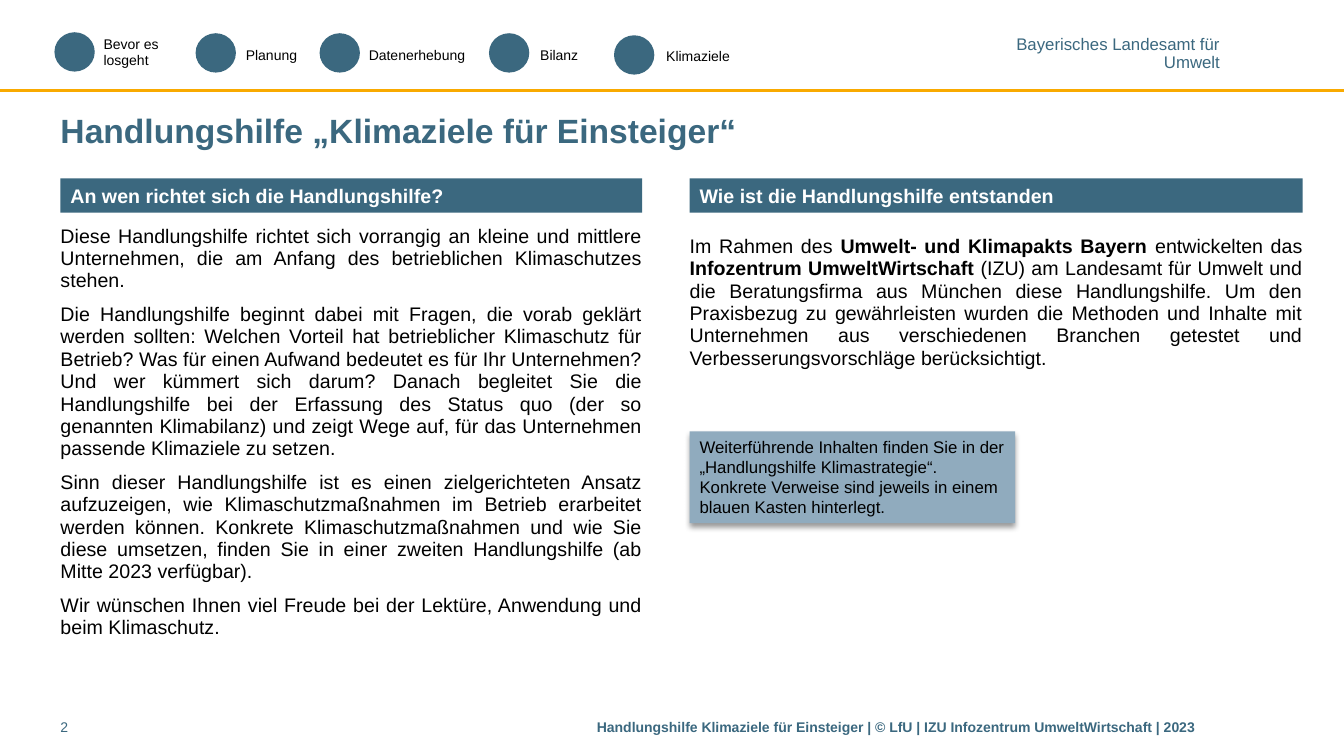
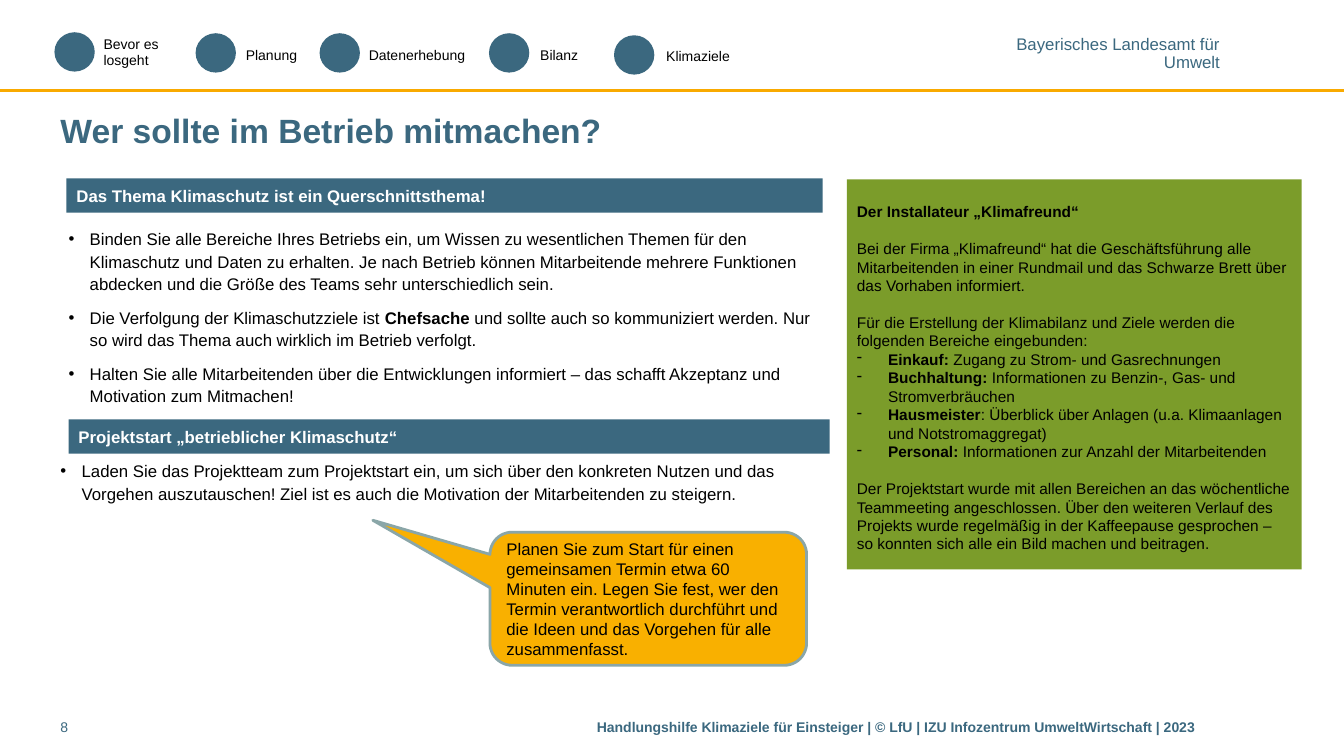
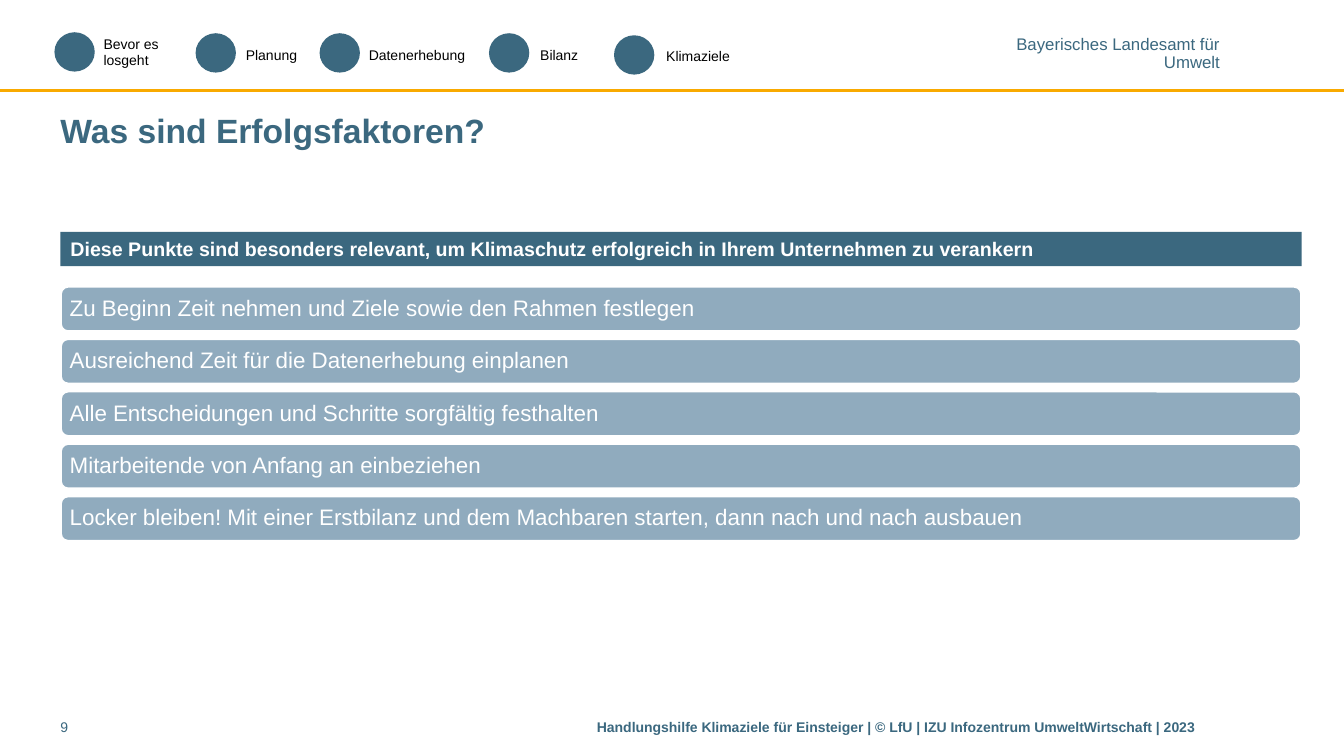
"""Builds three slides of a guide on climate targets for beginners."""
from lxml import etree
from pptx import Presentation
from pptx.dml.color import RGBColor
from pptx.enum.shapes import MSO_CONNECTOR, MSO_SHAPE
from pptx.enum.text import MSO_ANCHOR, MSO_AUTO_SIZE, PP_ALIGN
from pptx.oxml import parse_xml
from pptx.oxml.ns import nsdecls, qn
from pptx.util import Inches, Pt

BLUE = RGBColor(0x3B, 0x68, 0x7F)
LIGHT_BLUE = RGBColor(0x90, 0xAB, 0xBE)
AMBER = RGBColor(0xF9, 0xAA, 0x00)
CALLOUT = RGBColor(0xF9, 0xB0, 0x00)
GREY_BLUE = RGBColor(0x8A, 0xA6, 0xA8)
GREEN = RGBColor(0x7B, 0x9C, 0x2A)
BLACK = RGBColor(0, 0, 0)
WHITE = RGBColor(255, 255, 255)
FONT = "Arial"
BULLET_INDENT = {"• ": 0.21, "- ": 0.31}
LEFT, WIDTH = 0.6, 12.31
BAR_H = 0.34
TWO_CONTENT, TITLE_ONLY = 3, 5


def write(sp, paras, size, color=BLACK, bold=False, align=PP_ALIGN.LEFT,
          line=1.0, before=0, anchor=MSO_ANCHOR.TOP, side=0.1, wrap=True):
    """Fill a shape with paragraphs; ** marks bold and a leading sign a bullet."""
    tf = sp.text_frame
    tf.word_wrap = wrap
    tf.auto_size = MSO_AUTO_SIZE.NONE
    tf.vertical_anchor = anchor
    tf.margin_left = tf.margin_right = Inches(side)
    tf.margin_top = tf.margin_bottom = Inches(0.05)
    for i, text in enumerate(paras):
        p = tf.add_paragraph() if i else tf.paragraphs[0]
        p.alignment = align
        p.line_spacing = line
        p.space_before = Pt(before if i else 0)
        p.space_after = Pt(0)
        indent = BULLET_INDENT.get(text[:2], 0)
        pPr = p._p.get_or_add_pPr()
        pPr.set("marL", str(Inches(indent)))
        pPr.set("indent", str(Inches(-indent)))
        if indent:
            etree.SubElement(pPr, qn("a:buChar")).set("char", text[0])
            text = text[2:]
        else:
            etree.SubElement(pPr, qn("a:buNone"))
        for j, part in enumerate(text.split("**")):
            if part:
                r = p.add_run()
                r.text = part
                r.font.name = FONT
                r.font.size = Pt(size)
                r.font.color.rgb = color
                r.font.bold = bold or j % 2 == 1


def add_box(s, kind, x, y, w, h, fill, line=None):
    """Add a filled preset shape without a shadow."""
    sp = s.shapes.add_shape(kind, Inches(x), Inches(y), Inches(w), Inches(h))
    sp.shadow.inherit = False
    sp.fill.solid()
    sp.fill.fore_color.rgb = fill
    if line is None:
        sp.line.fill.background()
    else:
        sp.line.color.rgb = line
        sp.line.width = Pt(2)
    return sp


prs = Presentation()
prs.slide_width, prs.slide_height = Inches(13.33), Inches(7.5)

NAV = [
    (0.54, 0.32, 0.93, 0.30, ["Bevor es", "losgeht"]),
    (1.94, 0.33, 2.34, 0.41, ["Planung"]),
    (3.17, 0.33, 3.56, 0.41, ["Datenerhebung"]),
    (4.85, 0.33, 5.26, 0.41, ["Bilanz"]),
    (6.09, 0.35, 6.51, 0.42, ["Klimaziele"]),
]
FOOTER = ("Handlungshilfe Klimaziele für Einsteiger | © LfU | "
          "IZU Infozentrum UmweltWirtschaft | 2023")
SLIDES = [
    (TWO_CONTENT, "Handlungshilfe „Klimaziele für Einsteiger“", "2"),
    (TWO_CONTENT, "Wer sollte im Betrieb mitmachen?", "8"),
    (TITLE_ONLY, "Was sind Erfolgsfaktoren?", "9"),
]
BARS = [
    (0, LEFT, 1.77, 5.77, 14, "An wen richtet sich die Handlungshilfe?"),
    (0, 6.84, 1.77, 6.08, 14, "Wie ist die Handlungshilfe entstanden"),
    (1, 0.66, 1.77, 7.5, 12, "Das Thema Klimaschutz ist ein Querschnittsthema!"),
    (1, 0.68, 4.16, 7.55, 12, "Projektstart „betrieblicher Klimaschutz“"),
    (2, LEFT, 2.3, WIDTH, 14, "Diese Punkte sind besonders relevant, um Klimaschutz "
                              "erfolgreich in Ihrem Unternehmen zu verankern"),
]
BODIES = [
    (0, 1, LEFT, 2.18, 5.77, 4.3, 14, PP_ALIGN.JUSTIFY, [
        "Diese Handlungshilfe richtet sich vorrangig an kleine und mittlere "
        "Unternehmen, die am Anfang des betrieblichen Klimaschutzes stehen.",
        "Die Handlungshilfe beginnt dabei mit Fragen, die vorab geklärt werden "
        "sollten: Welchen Vorteil hat betrieblicher Klimaschutz für Betrieb? Was für "
        "einen Aufwand bedeutet es für Ihr Unternehmen? Und wer kümmert sich darum? "
        "Danach begleitet Sie die Handlungshilfe bei der Erfassung des Status quo "
        "(der so genannten Klimabilanz) und zeigt Wege auf, für das Unternehmen "
        "passende Klimaziele zu setzen.",
        "Sinn dieser Handlungshilfe ist es einen zielgerichteten Ansatz aufzuzeigen, "
        "wie Klimaschutzmaßnahmen im Betrieb erarbeitet werden können. Konkrete "
        "Klimaschutzmaßnahmen und wie Sie diese umsetzen, finden Sie in einer zweiten "
        "Handlungshilfe (ab Mitte 2023 verfügbar).",
        "Wir wünschen Ihnen viel Freude bei der Lektüre, Anwendung und beim "
        "Klimaschutz.",
    ]),
    (0, 2, 6.84, 2.28, 6.08, 2.07, 14, PP_ALIGN.JUSTIFY, [
        "Im Rahmen des **Umwelt- und Klimapakts Bayern** entwickelten das "
        "**Infozentrum UmweltWirtschaft** (IZU) am Landesamt für Umwelt und die "
        "Beratungsfirma aus München diese Handlungshilfe. Um den Praxisbezug zu "
        "gewährleisten wurden die Methoden und Inhalte mit Unternehmen aus "
        "verschiedenen Branchen getestet und Verbesserungsvorschläge berücksichtigt.",
    ]),
    (1, 1, 0.68, 2.2, 7.49, 1.85, 12, PP_ALIGN.LEFT, [
        "• Binden Sie alle Bereiche Ihres Betriebs ein, um Wissen zu wesentlichen "
        "Themen für den Klimaschutz und Daten zu erhalten. Je nach Betrieb können "
        "Mitarbeitende mehrere Funktionen abdecken und die Größe des Teams sehr "
        "unterschiedlich sein.",
        "• Die Verfolgung der Klimaschutzziele ist **Chefsache** und sollte auch so "
        "kommuniziert werden. Nur so wird das Thema auch wirklich im Betrieb verfolgt.",
        "• Halten Sie alle Mitarbeitenden über die Entwicklungen informiert – das "
        "schafft Akzeptanz und Motivation zum Mitmachen!",
    ]),
    (1, 2, LEFT, 4.5, 7.62, 2.58, 12, PP_ALIGN.LEFT, [
        "• Laden Sie das Projektteam zum Projektstart ein, um sich über den konkreten "
        "Nutzen und das Vorgehen auszutauschen! Ziel ist es auch die Motivation der "
        "Mitarbeitenden zu steigern.",
    ]),
]

for layout, title, number in SLIDES:
    s = prs.slides.add_slide(prs.slide_layouts[layout])
    rule = s.shapes.add_connector(MSO_CONNECTOR.STRAIGHT, 0, Inches(0.9),
                                  prs.slide_width, Inches(0.9))
    rule.line.color.rgb = AMBER
    rule.line.width = Pt(2)
    etree.SubElement(rule._element.spPr, qn("a:effectLst"))
    agency = s.shapes.add_textbox(Inches(10.07), Inches(0.32), Inches(2.03), Inches(0.44))
    write(agency, ["Bayerisches Landesamt für", "Umwelt"], 12, BLUE,
          align=PP_ALIGN.RIGHT, line=0.85, side=0, wrap=False)
    for dot_x, dot_y, x, y, label in NAV:
        add_box(s, MSO_SHAPE.OVAL, dot_x, dot_y, 0.4, 0.39, BLUE)
        tb = s.shapes.add_textbox(Inches(x), Inches(y), Inches(1.3),
                                  Inches(0.1 + 0.17 * len(label)))
        write(tb, label, 10)
    t = s.shapes.title
    t.left, t.top, t.width, t.height = Inches(LEFT), Inches(1.02), Inches(WIDTH), Inches(0.55)
    write(t, [title], 24, BLUE, bold=True, anchor=MSO_ANCHOR.MIDDLE, side=0)
    for x, w, text, bold in [(5.92, 6.99, FOOTER, True), (LEFT, 0.7, number, False)]:
        tb = s.shapes.add_textbox(Inches(x), Inches(7.08), Inches(w), Inches(0.31))
        write(tb, [text], 10, BLUE, bold=bold, side=0)

for i, x, y, w, size, text in BARS:
    bar = add_box(prs.slides[i], MSO_SHAPE.RECTANGLE, x, y, w, BAR_H, BLUE)
    write(bar, [text], size, WHITE, bold=True, anchor=MSO_ANCHOR.MIDDLE)

for i, idx, x, y, w, h, size, align, paras in BODIES:
    body = prs.slides[i].placeholders[idx]
    body.left, body.top, body.width, body.height = Inches(x), Inches(y), Inches(w), Inches(h)
    write(body, paras, size, align=align, line=Pt(16), before=8, side=0)

guide, team, factors = prs.slides

hint = add_box(guide, MSO_SHAPE.RECTANGLE, 6.84, 4.28, 3.23, 0.91, LIGHT_BLUE)
hint._element.spPr.find(qn("a:effectLst")).append(parse_xml(
    f'<a:outerShdw {nsdecls("a")} blurRad="{Pt(4)}" dist="{Pt(3)}" dir="5400000" '
    'rotWithShape="0"><a:srgbClr val="000000"><a:alpha val="40000"/></a:srgbClr>'
    '</a:outerShdw>'))
write(hint, ["Weiterführende Inhalten finden Sie in der „Handlungshilfe "
             "Klimastrategie“. Konkrete Verweise sind jeweils in einem blauen Kasten "
             "hinterlegt."], 12)

example = add_box(team, MSO_SHAPE.RECTANGLE, 8.4, 1.78, 4.51, 3.87, GREEN)
write(example, [
    "**Der Installateur „Klimafreund“**",
    "Bei der Firma „Klimafreund“ hat die Geschäftsführung alle Mitarbeitenden in einer "
    "Rundmail und das Schwarze Brett über das Vorhaben informiert.",
    "Für die Erstellung der Klimabilanz und Ziele werden die folgenden Bereiche "
    "eingebunden:",
    "- **Einkauf:** Zugang zu Strom- und Gasrechnungen",
    "- **Buchhaltung:** Informationen zu Benzin-, Gas- und Stromverbräuchen",
    "- **Hausmeister**: Überblick über Anlagen (u.a. Klimaanlagen und Notstromaggregat)",
    "- **Personal:** Informationen zur Anzahl der Mitarbeitenden",
    "Der Projektstart wurde mit allen Bereichen an das wöchentliche Teammeeting "
    "angeschlossen. Über den weiteren Verlauf des Projekts wurde regelmäßig in der "
    "Kaffeepause gesprochen – so konnten sich alle ein Bild machen und beitragen.",
], 11)
example.text_frame.margin_top = Inches(0.23)
for i in (1, 2, 7):
    example.text_frame.paragraphs[i].space_before = Pt(13)

callout = add_box(team, MSO_SHAPE.ROUNDED_RECTANGULAR_CALLOUT, 4.86, 5.28, 3.14, 1.32,
                  CALLOUT, GREY_BLUE)
callout.adjustments[0], callout.adjustments[1] = -0.87, -0.59
write(callout, ["Planen Sie zum Start für einen gemeinsamen Termin etwa 60 Minuten ein. "
                "Legen Sie fest, wer den Termin verantwortlich durchführt und die Ideen "
                "und das Vorgehen für alle zusammenfasst."], 12, anchor=MSO_ANCHOR.MIDDLE)

FACTORS = [
    "Zu Beginn Zeit nehmen und Ziele sowie den Rahmen festlegen",
    "Ausreichend Zeit für die Datenerhebung einplanen",
    "Alle Entscheidungen und Schritte sorgfältig festhalten",
    "Mitarbeitende von Anfang an einbeziehen",
    "Locker bleiben! Mit einer Erstbilanz und dem Machbaren starten, dann nach und nach "
    "ausbauen",
]
for i, text in enumerate(FACTORS):
    row = add_box(factors, MSO_SHAPE.ROUNDED_RECTANGLE, LEFT, 2.84 + 0.52 * i, WIDTH, 0.45,
                  LIGHT_BLUE, WHITE)
    write(row, [text], 16, WHITE, line=0.9, anchor=MSO_ANCHOR.MIDDLE, side=0.07)

prs.save("out.pptx")
